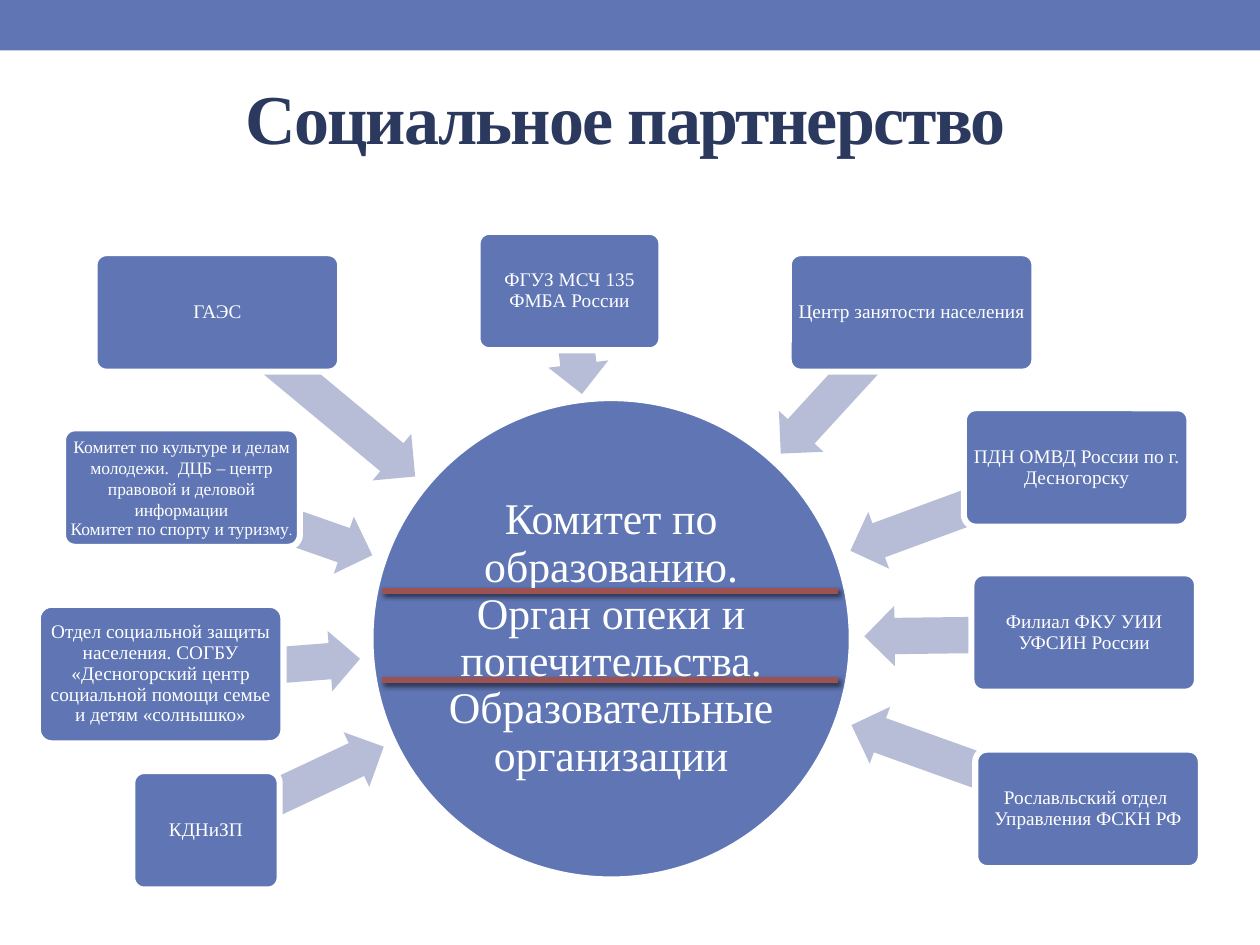
from dataclasses import dataclass

from lxml import etree
from pptx import Presentation
from pptx.dml.color import RGBColor
from pptx.enum.shapes import MSO_CONNECTOR, MSO_SHAPE
from pptx.enum.text import MSO_ANCHOR, PP_ALIGN
from pptx.oxml.ns import qn
from pptx.util import Inches, Pt

RECTANGLE = MSO_SHAPE.RECTANGLE
ELLIPSE = MSO_SHAPE.OVAL
ROUNDED = MSO_SHAPE.ROUNDED_RECTANGLE
LEFT_ARROW = MSO_SHAPE.LEFT_ARROW
STRAIGHT = MSO_CONNECTOR.STRAIGHT
CENTER = PP_ALIGN.CENTER
MIDDLE = MSO_ANCHOR.MIDDLE


@dataclass(frozen=True)
class Theme:
    font: str = "Times New Roman"
    primary: str = "6076B4"
    arrow: str = "B7BDD6"
    title: str = "2C395E"
    white: str = "FFFFFF"
    divider: str = "9C5252"
    shadow: str = "000000"
    title_size: int = 40
    hub_size: int = 25
    partner_size: int = 11
    small_size: int = 10
    tiny_size: int = 8
    outline: float = 3.5


THEME = Theme()
INSET = 0.02
ARROW_HEIGHT = 0.48
TIGHT = 0.9

TITLE = "Социальное партнерство"
HUB = "Комитет по образованию. Орган опеки и попечительства. Образовательные организации"
CULTURE = "Комитет по культуре и делам молодежи.  ДЦБ – центр правовой и деловой информации"
SPORT = "Комитет по спорту и туризму"

PARTNERS = [
    ("КДНиЗП", (1.05, 6.12, 1.17, 0.94), (1.55, 6.02, 1.57), 154.8),
    ("Отдел социальной защиты населения. СОГБУ «Десногорский центр социальной "
     "помощи семье и детям «солнышко»",
     (0.3, 4.8, 1.95, 1.1), (1.28, 5.05, 1.58), 175.5),
    (None, (0.5, 3.4, 1.88, 0.94), (1.39, 3.9, 1.61), 199.3),
    ("ГАЭС", (0.75, 2.01, 1.95, 0.94), (1.49, 2.89, 2.04), 219.7),
    ("ФГУЗ МСЧ 135 ФМБА России", (3.79, 1.84, 1.46, 0.94), (4.16, 2.48, 0.82), 263.1),
    ("Центр занятости населения", (6.26, 2.01, 1.95, 0.94), (5.95, 2.8, 1.52), 312.5),
    ("ПДН ОМВД России по г. Десногорску",
     (7.65, 3.24, 1.79, 0.94), (6.69, 3.8, 1.92), 339.8),
    ("Филиал ФКУ УИИ УФСИН России",
     (7.71, 4.55, 1.79, 0.94), (6.86, 4.8, 1.74), 359.3),
    ("Рославльский отдел  Управления ФСКН РФ",
     (7.74, 5.95, 1.79, 0.94), (6.7, 5.85, 1.99), 19.7),
]


def rgb(value):
    return RGBColor.from_string(value)


def lengths(values):
    return [Inches(value) for value in values]


def prepare_frame(holder, inset=INSET):
    frame = holder.text_frame
    frame.word_wrap = True
    frame.vertical_anchor = MIDDLE
    frame.margin_left = frame.margin_right = Inches(inset)
    frame.margin_top = frame.margin_bottom = Inches(inset)
    return frame


def write(paragraph, text, size=THEME.partner_size, color=THEME.white,
          bold=False, spacing=None, tracking=None):
    paragraph.alignment = CENTER
    if spacing:
        paragraph.line_spacing = spacing
    run = paragraph.add_run()
    run.text = text
    run.font.name = THEME.font
    run.font.size = Pt(size)
    run.font.bold = bold
    run.font.color.rgb = rgb(color)
    if tracking:
        run.font._element.set("spc", str(tracking))


def add_block(slide, kind, box, fill=THEME.primary, outlined=False):
    block = slide.shapes.add_shape(kind, *lengths(box))
    block.shadow.inherit = False
    block.fill.solid()
    block.fill.fore_color.rgb = rgb(fill)
    if outlined:
        block.line.color.rgb = rgb(THEME.white)
        block.line.width = Pt(THEME.outline)
    else:
        block.line.fill.background()
    return block


def add_title(slide):
    title = slide.shapes.add_textbox(*lengths((0.43, 0.3, 9.07, 1.25)))
    write(prepare_frame(title, 0.05).paragraphs[0], TITLE, size=THEME.title_size,
          color=THEME.title, bold=True, tracking=-100)


def add_hub(slide):
    hub = add_block(slide, ELLIPSE, (2.94, 3.16, 3.82, 3.82), outlined=True)
    write(prepare_frame(hub).paragraphs[0], HUB, size=THEME.hub_size, spacing=TIGHT)


def add_arrow(slide, place, rotation):
    arrow = add_block(slide, LEFT_ARROW, (*place, ARROW_HEIGHT), fill=THEME.arrow)
    arrow.adjustments[0] = 0.6
    arrow.adjustments[1] = 0.5
    arrow.rotation = rotation


def write_committees(frame):
    write(frame.paragraphs[0], CULTURE, size=THEME.small_size)
    sport = frame.add_paragraph()
    write(sport, SPORT, size=THEME.small_size, spacing=TIGHT)
    write(sport, ".", size=THEME.tiny_size)


def add_partner(slide, text, box):
    partner = add_block(slide, ROUNDED, box, outlined=True)
    partner.adjustments[0] = 0.1
    frame = prepare_frame(partner)
    if text:
        write(frame.paragraphs[0], text, spacing=TIGHT)
    else:
        write_committees(frame)


def add_divider(slide, y):
    divider = slide.shapes.add_connector(STRAIGHT, *lengths((3.03, y, 6.65, y)))
    divider.line.color.rgb = rgb(THEME.divider)
    divider.line.width = Pt(THEME.outline)
    effects = etree.SubElement(divider._element.spPr, qn("a:effectLst"))
    shadow = etree.SubElement(effects, qn("a:outerShdw"), blurRad=str(Pt(3)),
                              dist=str(Pt(2)), dir=str(45 * 60000))
    color = etree.SubElement(shadow, qn("a:srgbClr"), val=THEME.shadow)
    etree.SubElement(color, qn("a:alpha"), val="60000")


def main():
    deck = Presentation()
    deck.slide_width, deck.slide_height = lengths((10, 7.5))
    slide = deck.slides.add_slide(deck.slide_layouts[6])
    add_block(slide, RECTANGLE, (0, 0, 10, 0.4))
    add_title(slide)
    add_hub(slide)
    for text, box, arrow_place, rotation in PARTNERS:
        add_arrow(slide, arrow_place, rotation)
        add_partner(slide, text, box)
    for y in (4.69, 5.4):
        add_divider(slide, y)
    deck.save("out.pptx")


if __name__ == "__main__":
    main()
